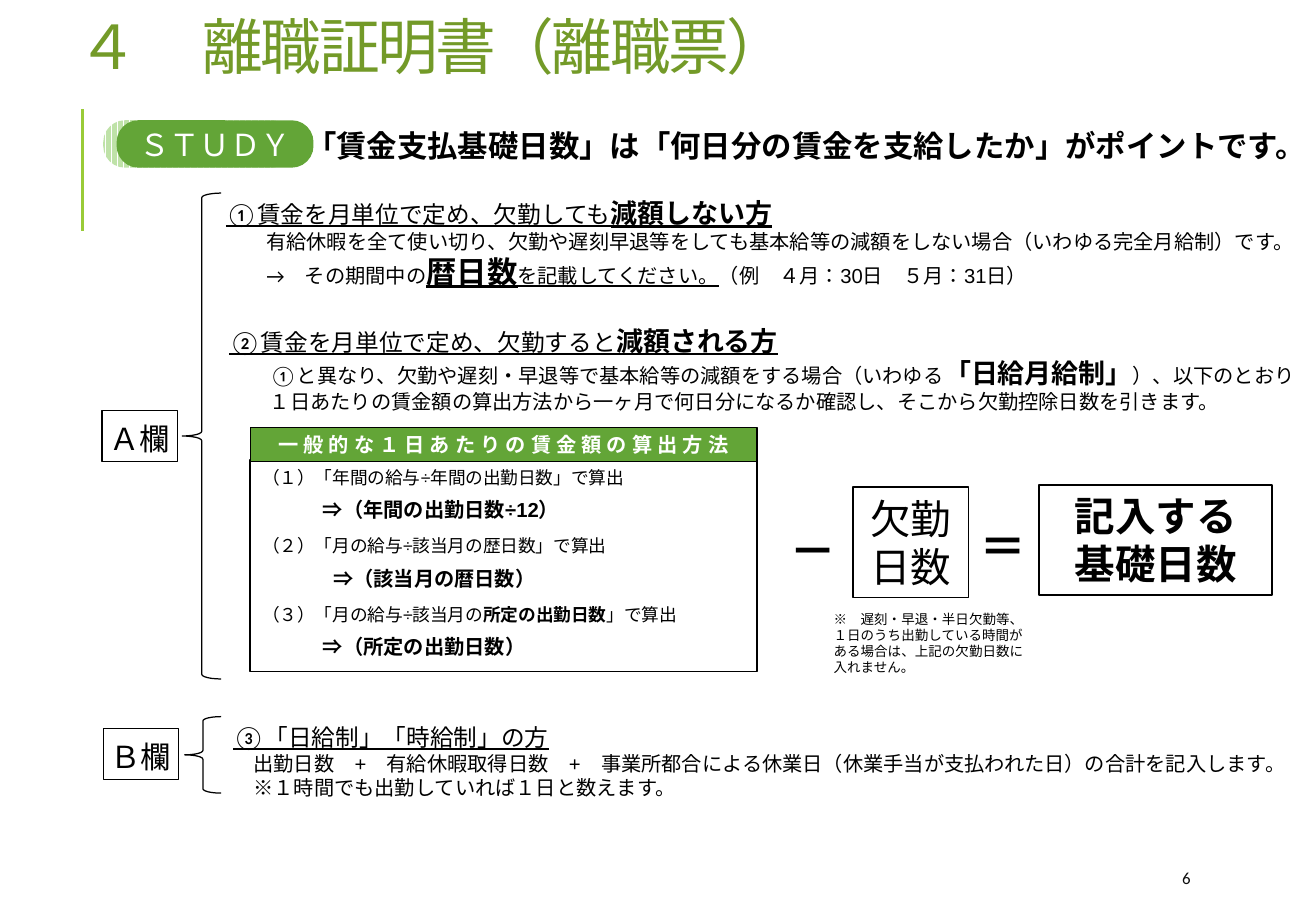
from lxml.etree import SubElement
from pptx import Presentation
from pptx.dml.color import RGBColor
from pptx.enum.dml import MSO_PATTERN
from pptx.enum.lang import MSO_LANGUAGE_ID
from pptx.enum.shapes import MSO_CONNECTOR, MSO_SHAPE
from pptx.enum.text import MSO_ANCHOR, MSO_AUTO_SIZE, PP_ALIGN
from pptx.oxml.ns import qn
from pptx.util import Inches, Pt

BLACK = RGBColor(0x00, 0x00, 0x00)
WHITE = RGBColor(0xFF, 0xFF, 0xFF)
GREEN = RGBColor(0x63, 0xA5, 0x37)
PALE_GREEN = RGBColor(0xBF, 0xE2, 0xA8)
LIME = RGBColor(0x99, 0xCB, 0x38)
TITLE_GREEN = RGBColor(0x73, 0x9A, 0x28)
NUMBER_GREY = RGBColor(0x0D, 0x0D, 0x0D)

BOLD = {"bold": True}
UNDERLINE = {"underline": True}
HEADING = {"size": Pt(14), "underline": True}
STRONG_HEADING = {"size": Pt(16), "underline": True, "bold": True}
CENTER = {"alignment": PP_ALIGN.CENTER}
MIDDLE = {"vertical_anchor": MSO_ANCHOR.MIDDLE}
INSETS = ("margin_left", "margin_top", "margin_right", "margin_bottom")


def insets(*lengths):
    return dict(zip(INSETS, map(Inches, lengths)))


def line(*runs, margin=0, indent=0, **layout):
    runs = [(run, {}) if isinstance(run, str) else run for run in runs]
    return runs, margin, indent, layout


class SlideBuilder:
    def __init__(self, presentation):
        self.slide = presentation.slides.add_slide(presentation.slide_layouts[5])
        self.style = {"name": "Arial", "size": Pt(12), "bold": False,
                      "underline": False, "language_id": MSO_LANGUAGE_ID.JAPANESE}

    def set_text(self, shape, lines, color=BLACK, east_asian="Calibri", frame=None, **style):
        text_frame = shape.text_frame
        settings = {"word_wrap": True, "auto_size": MSO_AUTO_SIZE.NONE,
                    "vertical_anchor": MSO_ANCHOR.TOP, **(frame or {})}
        for name, value in settings.items():
            setattr(text_frame, name, value)
        for index, (runs, margin, indent, layout) in enumerate(lines):
            paragraph = text_frame.add_paragraph() if index else text_frame.paragraphs[0]
            for name, value in {"alignment": PP_ALIGN.LEFT, **layout}.items():
                setattr(paragraph, name, value)
            properties = paragraph._p.get_or_add_pPr()
            properties.set("marL", str(Pt(margin)))
            properties.set("indent", str(Pt(indent)))
            for text, changes in runs:
                run = paragraph.add_run()
                run.text = text
                run.font.color.rgb = color
                values = {**self.style, **style, **changes}
                spacing = values.pop("spacing", 0)
                for name, value in values.items():
                    setattr(run.font, name, value)
                run_properties = run._r.get_or_add_rPr()
                if spacing:
                    run_properties.set("spc", str(int(spacing * 100)))
                SubElement(run_properties, qn("a:ea")).set("typeface", east_asian)

    def title(self, box, lines, **style):
        shape = self.slide.shapes.title
        for name, value in zip(("left", "top", "width", "height"), box):
            setattr(shape, name, Inches(value))
        self.set_text(shape, lines, **style)

    def text(self, box, lines, **style):
        self.set_text(self.slide.shapes.add_textbox(*map(Inches, box)), lines, **style)

    def shape(self, kind, box, fill=None, outline=None, adjustments=(), lines=(), **style):
        shape = self.slide.shapes.add_shape(kind, *map(Inches, box))
        shape.shadow.inherit = False
        for index, value in enumerate(adjustments):
            shape.adjustments[index] = value
        if fill is None:
            shape.fill.background()
        else:
            shape.fill.solid()
            shape.fill.fore_color.rgb = fill
        if outline is None:
            shape.line.fill.background()
        else:
            shape.line.color.rgb = BLACK
            shape.line.width = Pt(outline)
        if lines:
            self.set_text(shape, lines, **style)
        return shape

    def connector(self, start, end, color, width):
        connector = self.slide.shapes.add_connector(
            MSO_CONNECTOR.STRAIGHT, *map(Inches, (*start, *end)))
        connector.line.color.rgb = color
        connector.line.width = Pt(width)
        SubElement(connector._element.spPr, qn("a:effectLst"))


def add_heading(builder):
    builder.connector((0.68, 1.9), (0.68, 0.9), LIME, 1.5)
    builder.title((0.54, 0, 9.44, 0.85),
                  [line(("４　", {"spacing": 1}), ("離職証明書（離職票）", {"spacing": -1.5}),
                        line_spacing=0.8)],
                  color=TITLE_GREEN, name="Noto Sans CJK JP",
                  east_asian="Noto Sans CJK JP", size=Pt(36), frame=MIDDLE)
    stripes = builder.shape(MSO_SHAPE.ROUNDED_RECTANGLE, (0.85, 0.99, 1.57, 0.39),
                            adjustments=[0.46])
    stripes.fill.patterned()
    stripes.fill.pattern = MSO_PATTERN.DARK_VERTICAL
    stripes.fill.fore_color.rgb = PALE_GREEN
    stripes.fill.back_color.rgb = WHITE
    builder.shape(MSO_SHAPE.ROUNDED_RECTANGLE, (0.96, 0.99, 1.62, 0.39), GREEN,
                  adjustments=[0.46], lines=[line("ＳＴＵＤＹ", **CENTER)],
                  color=WHITE, size=Pt(18), frame=MIDDLE)
    builder.text((2.42, 1, 8.41, 0.4),
                 [line("「賃金支払基礎日数」は「何日分の賃金を支給したか」がポイントです。")],
                 size=Pt(18), bold=True)


def add_sections(builder):
    builder.text((1.76, 1.57, 9.07, 0.88), [
        line(("①賃金を月単位で定め、欠勤しても", HEADING), ("減額しない方", STRONG_HEADING)),
        line("有給休暇を全て使い切り、欠勤や遅刻早退等をしても基本給等の減額をしない場合（いわゆる完全月給制）です。",
             margin=24),
        line("→　その期間中の", ("暦日数", {"size": Pt(18), **BOLD, **UNDERLINE}),
             ("を記載してください。", UNDERLINE), "（例　４月：30日　５月：31日）", margin=24)])
    builder.text((1.79, 2.62, 9.04, 0.84), [
        line(("②賃金を月単位で定め、欠勤すると", HEADING), ("減額される方", STRONG_HEADING)),
        line("①と異なり、欠勤や遅刻・早退等で基本給等の減額をする場合（いわゆる",
             ("「日給月給制」", {"size": Pt(16), **BOLD}), "）、以下のとおり", margin=24),
        line("１日あたりの賃金額の算出方法から一ヶ月で何日分になるか確認し、そこから欠勤控除日数を引きます。",
             margin=24)])
    builder.text((1.82, 5.9, 8.82, 0.94), [
        line(("③「日給制」「時給制」の方", HEADING)),
        line("出勤日数　+　有給休暇取得日数　+　事業所都合による休業日（休業手当が支払われた日）の合計を記入します。",
             indent=12),
        line("※１時間でも出勤していれば１日と数えます。", indent=12)])


def add_calculation(builder):
    methods = [
        (["（１）「年間の給与÷年間の出勤日数」で算出"], "⇒（年間の出勤日数÷12）", 36),
        (["（２）「月の給与÷該当月の歴日数」で算出"], "⇒（該当月の暦日数）", 42),
        (["（３）「月の給与÷該当月の", ("所定の出勤日数", BOLD), "」で算出"],
         "⇒（所定の出勤日数）", 36)]
    lines = []
    for index, (method, result, margin) in enumerate(methods):
        lines.append(line(*method, space_before=Pt(8 if index else 0)))
        lines.append(line((result, {"size": Pt(12), **BOLD}), margin=margin,
                          space_before=Pt(5.75)))
    builder.shape(MSO_SHAPE.RECTANGLE, (2.06, 3.79, 4.17, 1.74), outline=1,
                  lines=lines, size=Pt(10.5))
    builder.shape(MSO_SHAPE.RECTANGLE, (2.06, 3.52, 4.17, 0.28), GREEN, 0.75,
                  lines=[line("一般的な１日あたりの賃金額の算出方法", **CENTER)],
                  color=WHITE, name="Cabin", bold=True, spacing=3,
                  frame={"vertical_anchor": MSO_ANCHOR.BOTTOM, **insets(0.1, 0.04, 0.1, 0.04)})
    for sign, left, top in (("－", 6.4, 4.24), ("＝", 7.96, 4.21)):
        builder.text((left, top, 0.63, 0.59), [line(sign)], size=Pt(28), bold=True)
    builder.shape(MSO_SHAPE.RECTANGLE, (7.02, 4.01, 0.95, 0.91), outline=1,
                  lines=[line("欠勤日数", **CENTER)], size=Pt(24), frame=MIDDLE)
    builder.shape(MSO_SHAPE.RECTANGLE, (8.55, 3.99, 1.92, 0.91), outline=1,
                  lines=[line(text, **CENTER) for text in ("記入する", "基礎日数")],
                  size=Pt(24), bold=True)
    builder.text((6.82, 4.99, 1.74, 0.62),
                 [line("※　遅刻・早退・半日欠勤等、１日のうち出勤している時間がある場合は、上記の欠勤日数に入れません。")],
                 size=Pt(8), frame=insets(0.04, 0.04, 0.04, 0.04))


def add_columns(builder):
    columns = [("Ａ欄", (0.84, 3.38), (1.5, 1.59, 0.32, 4)),
               ("Ｂ欄", (0.85, 6), (1.52, 5.9, 0.3, 0.63))]
    for label, corner, brace in columns:
        builder.shape(MSO_SHAPE.LEFT_BRACE, brace, outline=0.75, adjustments=[0.12, 0.5])
        builder.shape(MSO_SHAPE.RECTANGLE, (*corner, 0.62, 0.42), outline=0.75,
                      lines=[line(label, **CENTER)], name="Cabin", size=Pt(18),
                      frame={**MIDDLE, **insets(0.04, 0.08, 0.04, 0.04)})


def main():
    presentation = Presentation()
    presentation.slide_width = Inches(10.83)
    presentation.slide_height = Inches(7.5)
    builder = SlideBuilder(presentation)
    add_heading(builder)
    add_sections(builder)
    add_calculation(builder)
    add_columns(builder)
    builder.text((9.63, 7.08, 0.87, 0.3), [line("6")], color=NUMBER_GREY,
                 name="Calibri", size=Pt(10), frame=MIDDLE)
    presentation.save("out.pptx")


if __name__ == "__main__":
    main()
